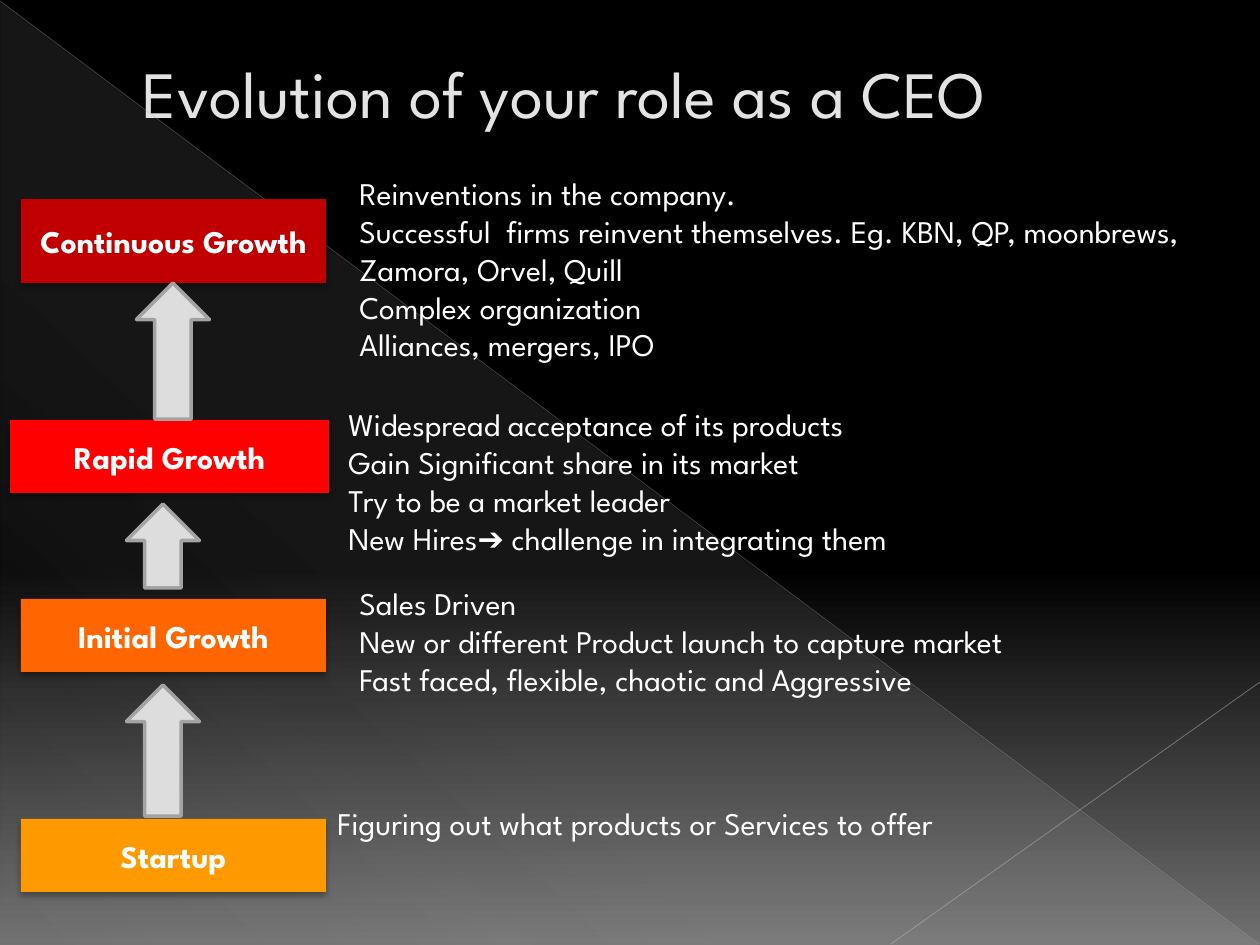
from pptx import Presentation
from pptx.dml.color import RGBColor as Rgb
from pptx.enum.shapes import MSO_CONNECTOR as Conn, MSO_SHAPE as Geo
from pptx.enum.text import MSO_ANCHOR as Anchor, MSO_AUTO_SIZE as Fit, PP_ALIGN as Align
from pptx.oxml import parse_xml
from pptx.oxml.ns import nsdecls
from pptx.util import Pt

SCALE = 914400 / 126  # EMU in one px

THEME = {
    "font": "League Spartan",
    "title": {"size": Pt(37.8), "color": "E3E3E3"},
    "body": {"size": Pt(18), "color": "FFFFFF"},
    "label": {"size": Pt(18), "color": "FFFFFF", "bold": True},
    "arrow": {"fill": "DDDDDD", "line": "A3A3A3", "width": Pt(2)},
    "back": [(0, "000000", 100), (60, "000000", 100), (100, "707070", 100)],
    "wedge": [(0, "F8F8F8", 10), (70, "F8F8F8", 8), (100, "F8F8F8", 1)],
}

# Stage name, colour, box, notes box, notes
STAGES = [
    ("Continuous Growth", "C00000", (21, 199, 305, 84), (347, 168, 882, 204),
     ["Reinventions in the company.",
      "Successful  firms reinvent themselves. Eg. KBN, QP, moonbrews, "
      "Zamora, Orvel, Quill",
      "Complex organization",
      "Alliances, mergers, IPO"]),
    ("Rapid Growth", "FF0000", (10, 420, 319, 73), (336, 399, 882, 165),
     ["Widespread acceptance of its products",
      "Gain Significant share in its market",
      "Try to be a market leader",
      "New Hires➔ challenge in integrating them"]),
    ("Initial Growth", "FF6600", (21, 599, 305, 73), (347, 578, 882, 127),
     ["Sales Driven",
      "New or different Product launch to capture market",
      "Fast faced, flexible, chaotic and Aggressive"]),
    ("Startup", "FF9900", (21, 819, 305, 73), (325, 798, 653, 89),
     ["Figuring out what products or Services to offer"]),
]

# Centre, top and length of each upward arrow
ARROWS = [(173, 283, 136), (163, 504, 84), (163, 685, 131)]
THICK = 73


def px(*nums):
    return [round(n * SCALE) for n in nums]


def style(font, look):
    for key, val in look.items():
        if key == "color":
            font.color.rgb = Rgb.from_string(val)
        else:
            setattr(font, key, val)
    font.name = THEME["font"]


def write(frame, lines, look, align=Align.LEFT):
    for num, line in enumerate(lines):
        para = frame.add_paragraph() if num else frame.paragraphs[0]
        para.alignment = align
        run = para.add_run()
        run.text = line
        style(run.font, look)


def blend(node, stops, angle):
    """Put a linear gradient in place of a solid fill."""
    marks = "".join(
        f'<a:gs pos="{pos * 1000}"><a:srgbClr val="{tint}">'
        f'<a:alpha val="{alpha * 1000}"/></a:srgbClr></a:gs>'
        for pos, tint, alpha in stops)
    grad = parse_xml(
        f'<a:gradFill {nsdecls("a")} rotWithShape="1"><a:gsLst>{marks}</a:gsLst>'
        f'<a:lin ang="{angle * 60000}" scaled="0"/></a:gradFill>')
    node.getparent().replace(node, grad)


def add_alpha(node, part):
    node.append(parse_xml(f'<a:alpha {nsdecls("a")} val="{part * 1000}"/>'))


def add_form(slide, geo, box, tint):
    form = slide.shapes.add_shape(geo, *px(*box))
    form.shadow.inherit = False
    form.fill.solid()
    form.fill.fore_color.rgb = Rgb.from_string(tint)
    form.line.fill.background()
    return form


def add_ray(slide, ends, tint, width, part):
    ray = slide.shapes.add_connector(Conn.STRAIGHT, *px(*ends))
    ray.line.color.rgb = Rgb.from_string(tint)
    ray.line.width = Pt(width)
    props = ray.element.spPr
    add_alpha(props.xpath(".//a:srgbClr")[0], part)
    props.append(parse_xml(f'<a:effectLst {nsdecls("a")}/>'))


def add_back(slide):
    slide.background.fill.solid()
    blend(slide.element.xpath(".//p:bgPr/a:solidFill")[0], THEME["back"], 90)
    wedge = add_form(slide, Geo.RIGHT_TRIANGLE, (1, 2, 1258, 943), "F8F8F8")
    blend(wedge.element.spPr.xpath("./a:solidFill")[0], THEME["wedge"], 133)
    add_ray(slide, (0, 1, 1259, 944), "B4B4B4", 0.39, 35)
    add_ray(slide, (1260, 682, 891, 944), "BDBDBD", 0.47, 45)


def add_title(slide, text):
    title = slide.shapes.title
    title.left, title.top, title.width, title.height = px(63, 37, 1134, 110)
    frame = title.text_frame
    for key, val in {"auto_size": Fit.NONE, "word_wrap": True,
                     "vertical_anchor": Anchor.MIDDLE}.items():
        setattr(frame, key, val)
    write(frame, [text], THEME["title"])
    props = frame.paragraphs[0]._p.get_or_add_pPr()
    props.set("marL", str(px(67)[0]))
    props.set("indent", "0")


def add_stage(slide, name, tint, box):
    form = add_form(slide, Geo.RECTANGLE, box, tint)
    frame = form.text_frame
    frame.vertical_anchor = Anchor.MIDDLE
    write(frame, [name], THEME["label"], Align.CENTER)
    # Soft shadow below the box
    form.element.spPr.xpath("./a:effectLst")[0].append(parse_xml(
        f'<a:outerShdw {nsdecls("a")} blurRad="{Pt(3.5)}" dist="{Pt(2.2)}" '
        'dir="5400000" rotWithShape="0"><a:srgbClr val="000000">'
        '<a:alpha val="32000"/></a:srgbClr></a:outerShdw>'))


def add_notes(slide, box, lines):
    frame = slide.shapes.add_textbox(*px(*box)).text_frame
    frame.word_wrap = True
    frame.auto_size = Fit.SHAPE_TO_FIT_TEXT
    write(frame, lines, THEME["body"])


def add_arrow(slide, mid, top, size):
    look = THEME["arrow"]
    box = (mid - size / 2, top + (size - THICK) / 2, size, THICK)
    form = add_form(slide, Geo.RIGHT_ARROW, box, look["fill"])
    form.rotation = 270
    form.line.color.rgb = Rgb.from_string(look["line"])
    form.line.width = look["width"]


def main():
    deck = Presentation()
    deck.slide_width, deck.slide_height = px(1260, 945)
    slide = deck.slides.add_slide(deck.slide_layouts[5])
    add_back(slide)
    add_title(slide, "Evolution of your role as a CEO")
    for name, tint, box, area, lines in STAGES:
        add_stage(slide, name, tint, box)
        add_notes(slide, area, lines)
    for arrow in ARROWS:
        add_arrow(slide, *arrow)
    deck.save("out.pptx")


if __name__ == "__main__":
    main()
